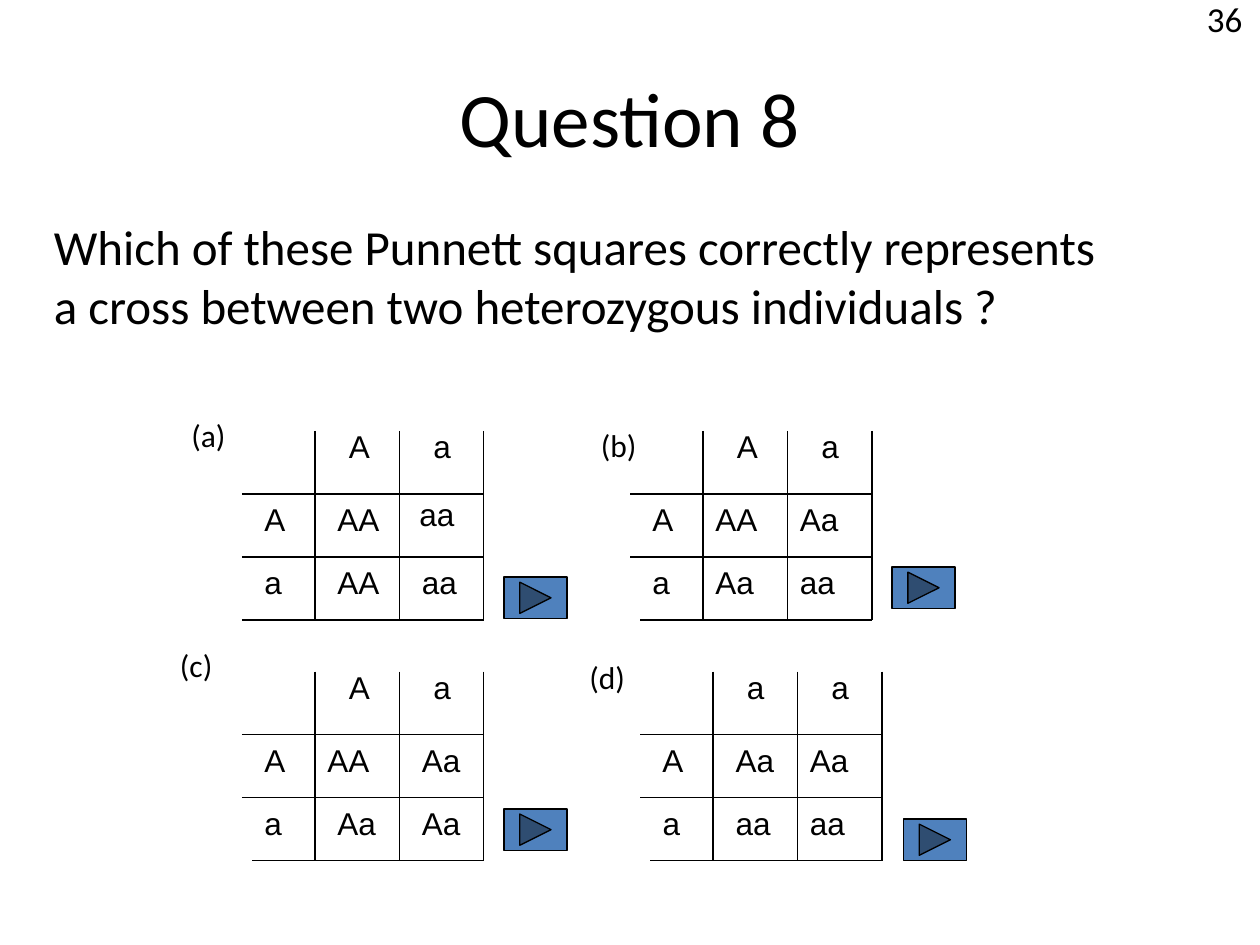
from dataclasses import dataclass

from lxml import etree
from pptx import Presentation
from pptx.dml.color import RGBColor
from pptx.enum.shapes import MSO_CONNECTOR, MSO_SHAPE
from pptx.enum.text import MSO_ANCHOR, PP_ALIGN
from pptx.oxml.ns import qn
from pptx.util import Inches, Pt

STRAIGHT = MSO_CONNECTOR.STRAIGHT
NEXT_BUTTON = MSO_SHAPE.ACTION_BUTTON_FORWARD_OR_NEXT
TOP, MIDDLE = MSO_ANCHOR.TOP, MSO_ANCHOR.MIDDLE
LEFT, CENTER = PP_ALIGN.LEFT, PP_ALIGN.CENTER


@dataclass(frozen=True)
class Theme:
    """Colours, fonts and type sizes of the slide."""
    ink: RGBColor = RGBColor(0, 0, 0)
    button: RGBColor = RGBColor(0x4F, 0x81, 0xBD)
    body_font: str = "Calibri"
    allele_font: str = "Arial"
    title: int = 44
    question: int = 28
    number: int = 20
    small: int = 18
    rule: float = 0.75


THEME = Theme()
ROW, COL, HEAD_COL = 0.5, 0.67, 0.58
ALLELE_W = {"A": 0.37, "a": 0.39, "AA": 0.65, "Aa": 0.61, "aa": 0.57}

# Each square: label, label position, grid corner, inset of bottom rule,
# column alleles, cells as (genotype, dx, dy), button position.
SQUARES = [
    ("(a)", (1.42, 3.25), (1.92, 3.42), 0, "Aa",
     [[("AA", 0.08, 0), ("aa", 0.06, -0.04)],
      [("AA", 0.08, 0), ("aa", 0.08, 0)]], (4, 4.58)),
    ("(b)", (4.67, 3.33), (5, 3.42), 0.08, "Aa",
     [[("AA", 0, 0), ("Aa", 0, 0)],
      [("Aa", 0, 0), ("aa", 0, 0)]], (7.08, 4.5)),
    ("(c)", (1.33, 5.08), (1.92, 5.33), 0.08, "Aa",
     [[("AA", 0, 0), ("Aa", 0.08, 0)],
      [("Aa", 0.08, 0), ("Aa", 0.08, 0)]], (4, 6.42)),
    ("(d)", (4.58, 5.17), (5.08, 5.33), 0.08, "aa",
     [[("Aa", 0.08, 0), ("Aa", 0, 0)],
      [("aa", 0.08, 0), ("aa", 0, 0)]], (7.17, 6.5)),
]


def add_text(shapes, text, box, size=THEME.small, font=THEME.body_font,
             align=LEFT, anchor=TOP, wrap=False):
    """Add a text box with one paragraph for each line of text."""
    tb = shapes.add_textbox(*map(Inches, box))
    tf = tb.text_frame
    tf.word_wrap = wrap
    tf.vertical_anchor = anchor
    for i, line in enumerate(text.split("\n")):
        p = tf.paragraphs[0] if i == 0 else tf.add_paragraph()
        p.alignment = align
        r = p.add_run()
        r.text = line
        r.font.size = Pt(size)
        r.font.name = font
        r.font.color.rgb = THEME.ink


def add_allele(shapes, text, x, y):
    """Add an allele or genotype at the given place."""
    add_text(shapes, text, (x, y, ALLELE_W[text], ROW), font=THEME.allele_font)


def add_rule(shapes, x1, y1, x2, y2):
    """Add one thin grid line."""
    line = shapes.add_connector(STRAIGHT, *map(Inches, (x1, y1, x2, y2)))
    line.line.color.rgb = THEME.ink
    line.line.width = Pt(THEME.rule)
    etree.SubElement(line._element.spPr, qn("a:effectLst"))


def add_grid(shapes, x, y, bottom_inset, column_alleles):
    """Add the rules and the parent alleles of one square."""
    columns = [x + HEAD_COL + i * COL for i in range(3)]
    rows = [y + (i + 1) * ROW for i in range(3)]
    for column in columns:
        add_rule(shapes, column, y, column, rows[-1])
    for row, inset in zip(rows, (0, 0, bottom_inset)):
        add_rule(shapes, x + inset, row, columns[-1], row)
    for column, allele in zip(columns, column_alleles):
        add_allele(shapes, allele, column + 0.17, y - 0.08)
    for row, allele in zip(rows, "Aa"):
        add_allele(shapes, allele, x + 0.08, row)


def add_button(shapes, x, y):
    """Add a forward button."""
    sp = shapes.add_shape(NEXT_BUTTON, *map(Inches, (x, y, 0.5, 0.33)))
    sp.shadow.inherit = False
    sp.fill.solid()
    sp.fill.fore_color.rgb = THEME.button
    sp.line.color.rgb = THEME.ink
    sp.line.width = Pt(THEME.rule)


def add_punnett(s, label, label_at, corner, bottom_inset, column_alleles,
                cells, button_at):
    """Add one labelled Punnett square with its button."""
    x, y = corner
    add_grid(s.shapes.add_group_shape().shapes, x, y, bottom_inset,
             column_alleles)
    for i, row in enumerate(cells):
        for j, (genotype, dx, dy) in enumerate(row):
            add_allele(s.shapes, genotype, x + HEAD_COL + j * COL + dx,
                       y + (i + 1) * ROW + dy)
    add_text(s.shapes, label, (*label_at, 0.57, ROW))
    add_button(s.shapes, *button_at)


def add_heading(s):
    """Add the title, the question and the slide number."""
    add_text(s.shapes, "Question 8", (0.5, 0.3, 9, 1.25), size=THEME.title,
             align=CENTER, anchor=MIDDLE, wrap=True)
    add_text(s.shapes,
             "Which of these Punnett squares correctly represents\n"
             "a cross between two heterozygous individuals ?",
             (0.33, 1.67, 8.57, 1.04), size=THEME.question)
    add_text(s.shapes, "36", (9.48, -0.07, 0.48, 0.43), size=THEME.number)


def main():
    """Build and save the slide."""
    prs = Presentation()
    prs.slide_width, prs.slide_height = Inches(10), Inches(7.5)
    s = prs.slides.add_slide(prs.slide_layouts[6])
    add_heading(s)
    for square in SQUARES:
        add_punnett(s, *square)
    prs.save("out.pptx")


if __name__ == "__main__":
    main()
